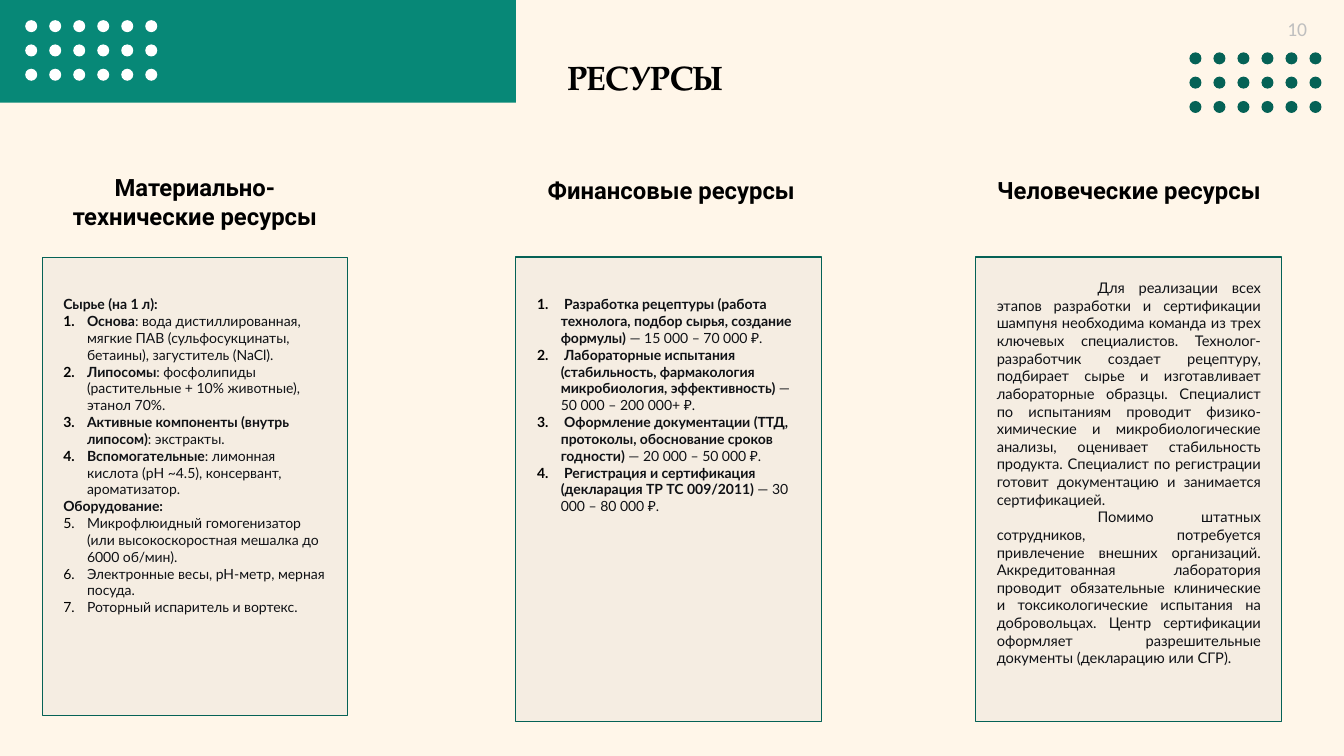
import dataclasses

import pptx
import pptx.dml.color
import pptx.enum.shapes
import pptx.enum.text
import pptx.util
from lxml import etree

Pt = pptx.util.Pt
RGB = pptx.dml.color.RGBColor.from_string
Shape = pptx.enum.shapes.MSO_SHAPE
Align = pptx.enum.text.PP_ALIGN
NS = "http://schemas.openxmlformats.org/drawingml/2006/main"


@dataclasses.dataclass(frozen=True)
class Theme:
    back: str = "FFF6E9"
    band: str = "078877"
    dark: str = "056256"
    white: str = "FFFFFF"
    grey: str = "BFBFBF"
    black: str = "000000"
    ink: str = "0F1115"
    title: float = 24
    page: float = 14
    head: float = 17
    item: float = 10
    prose: float = 10.5


theme = Theme()


def write(box, text, size, font="Lato", color=theme.ink, bold=False,
          align=Align.LEFT, start=0, first=0):
    """Add a paragraph; bold ends at "|", and start numbers it from that value."""
    frame = box.text_frame
    frame.word_wrap = True
    frame.vertical_anchor = pptx.enum.text.MSO_ANCHOR.TOP
    para = frame.paragraphs[-1]
    if para.runs:
        para = frame.add_paragraph()
    para.alignment = align
    props = para._p.get_or_add_pPr()
    if first:
        props.set("indent", str(Pt(first)))
    if start:
        props.set("marL", str(Pt(17)))
        props.set("indent", str(-Pt(17)))
        tint = etree.SubElement(props, f"{{{NS}}}buClr")
        etree.SubElement(tint, f"{{{NS}}}srgbClr", val=theme.black)
        etree.SubElement(props, f"{{{NS}}}buFont", typeface="+mj-lt")
        etree.SubElement(props, f"{{{NS}}}buAutoNum",
                         type="arabicPeriod", startAt=str(start))
    for i, part in enumerate(text.split("|")):
        run = para.add_run()
        run.text = part
        run.font.name = font
        run.font.size = Pt(size)
        run.font.bold = bold and i == 0
        run.font.color.rgb = RGB(color)


def draw(shapes, kind, left, top, width, height, fill):
    shape = shapes.add_shape(kind, Pt(left), Pt(top), Pt(width), Pt(height))
    shape.shadow.inherit = False
    shape.fill.solid()
    shape.fill.fore_color.rgb = RGB(fill)
    shape.line.fill.background()
    return shape


deck = pptx.Presentation()
deck.slide_width, deck.slide_height = Pt(960), Pt(540)
slide = deck.slides.add_slide(deck.slide_layouts[5])
slide.background.fill.solid()
slide.background.fill.fore_color.rgb = RGB(theme.back)
shapes = slide.shapes

# Header
draw(shapes, Shape.RECTANGLE, 0, 0, 368.6, 73.4, theme.band)
for left, top, color in [(849.6, 37.4, theme.dark), (18, 14.4, theme.white)]:
    dots = shapes.add_group_shape().shapes
    for row in range(3):
        for col in range(6):
            draw(dots, Shape.OVAL, left + col * 17.15, top + row * 17.35,
                 8.6, 8.6, color)

title = shapes.title
title.left, title.top, title.width, title.height = Pt(398.2), Pt(37.4), Pt(149.8), Pt(36)
write(title, "РЕСУРСЫ", theme.title, font="TeX Gyre Pagella",
      color=theme.black, bold=True)
title.text_frame.auto_size = pptx.enum.text.MSO_AUTO_SIZE.SHAPE_TO_FIT_TEXT

page = shapes.add_textbox(Pt(900.7), Pt(8.6), Pt(51.8), Pt(19.4))
write(page, "10", theme.page, font="Calibri", color=theme.grey, align=Align.CENTER)

# Columns: card left, card height, heading left, top and width, text top, heading
cols = [
    (30.2, 327.6, 33.8, 120.2, 211, 207.8, "Материально-технические ресурсы"),
    (368.6, 332, 378, 121.7, 203, 207.8, "Финансовые ресурсы"),
    (697, 332, 704.9, 121.7, 203, 195.8, "Человеческие ресурсы"),
]
bodies = []
for left, tall, x, y, wide, top, name in cols:
    head = shapes.add_textbox(Pt(x), Pt(y), Pt(wide), Pt(28.8))
    write(head, name, theme.head, font="Roboto", color=theme.black,
          bold=True, align=Align.CENTER)
    card = draw(shapes, Shape.RECTANGLE, left, 183.6, 218.2, tall, theme.grey)
    tint = card.fill._xPr.find(f".//{{{NS}}}srgbClr")
    etree.SubElement(tint, f"{{{NS}}}alpha", val="15000")
    card.line.color.rgb = RGB(theme.dark)
    card.line.width = Pt(0.75)
    bodies.append(shapes.add_textbox(Pt(left + 7.9), Pt(top), Pt(203), Pt(504.7 - top)))
goods, costs, staff = bodies

# Materials
write(goods, "Сырье (на 1 л):", theme.item, bold=True)
for text in [
    "Основа|: вода дистиллированная, мягкие ПАВ (сульфосукцинаты, бетаины), загуститель (NaCl).",
    "Липосомы|: фосфолипиды (растительные + 10% животные), этанол 70%.",
    "Активные компоненты (внутрь липосом)|: экстракты.",
    "Вспомогательные|: лимонная кислота (pH ~4.5), консервант, ароматизатор.",
]:
    write(goods, text, theme.item, bold=True, start=1)
write(goods, "Оборудование:", theme.item, bold=True)
for text in [
    "Микрофлюидный гомогенизатор (или высокоскоростная мешалка до 6000 об/мин).",
    "Электронные весы, pH-метр, мерная посуда.",
    "Роторный испаритель и вортекс.",
]:
    write(goods, text, theme.item, start=5)

# Finance
for text in [
    " Разработка рецептуры (работа технолога, подбор сырья, создание формулы)| — 15 000 – 70 000 ₽.",
    " Лабораторные испытания (стабильность, фармакология микробиология, эффективность)| — 50 000 – 200 000+ ₽.",
    " Оформление документации (ТТД, протоколы, обоснование сроков годности)| — 20 000 – 50 000 ₽.",
    " Регистрация и сертификация (декларация ТР ТС 009/2011)| — 30 000 – 80 000 ₽.",
]:
    write(costs, text, theme.item, bold=True, start=1)

# People
for text in [
    "Для реализации всех этапов разработки и сертификации шампуня необходима "
    "команда из трех ключевых специалистов. Технолог-разработчик создает рецептуру, "
    "подбирает сырье и изготавливает лабораторные образцы. Специалист по испытаниям "
    "проводит физико-химические и микробиологические анализы, оценивает стабильность "
    "продукта. Специалист по регистрации готовит документацию и занимается сертификацией.",
    "Помимо штатных сотрудников, потребуется привлечение внешних организаций. "
    "Аккредитованная лаборатория проводит обязательные клинические и токсикологические "
    "испытания на добровольцах. Центр сертификации оформляет разрешительные документы "
    "(декларацию или СГР).",
]:
    write(staff, text, theme.prose, align=Align.JUSTIFY, first=72)

deck.save("out.pptx")
